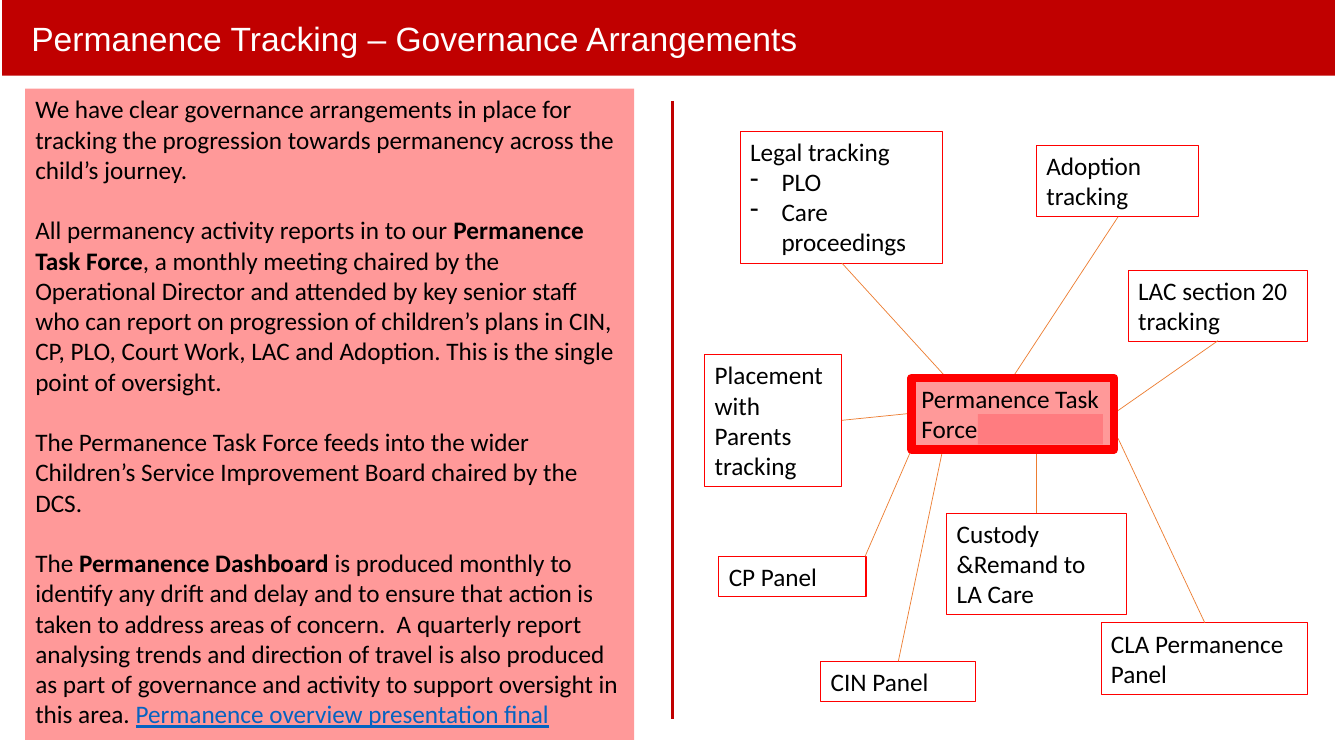
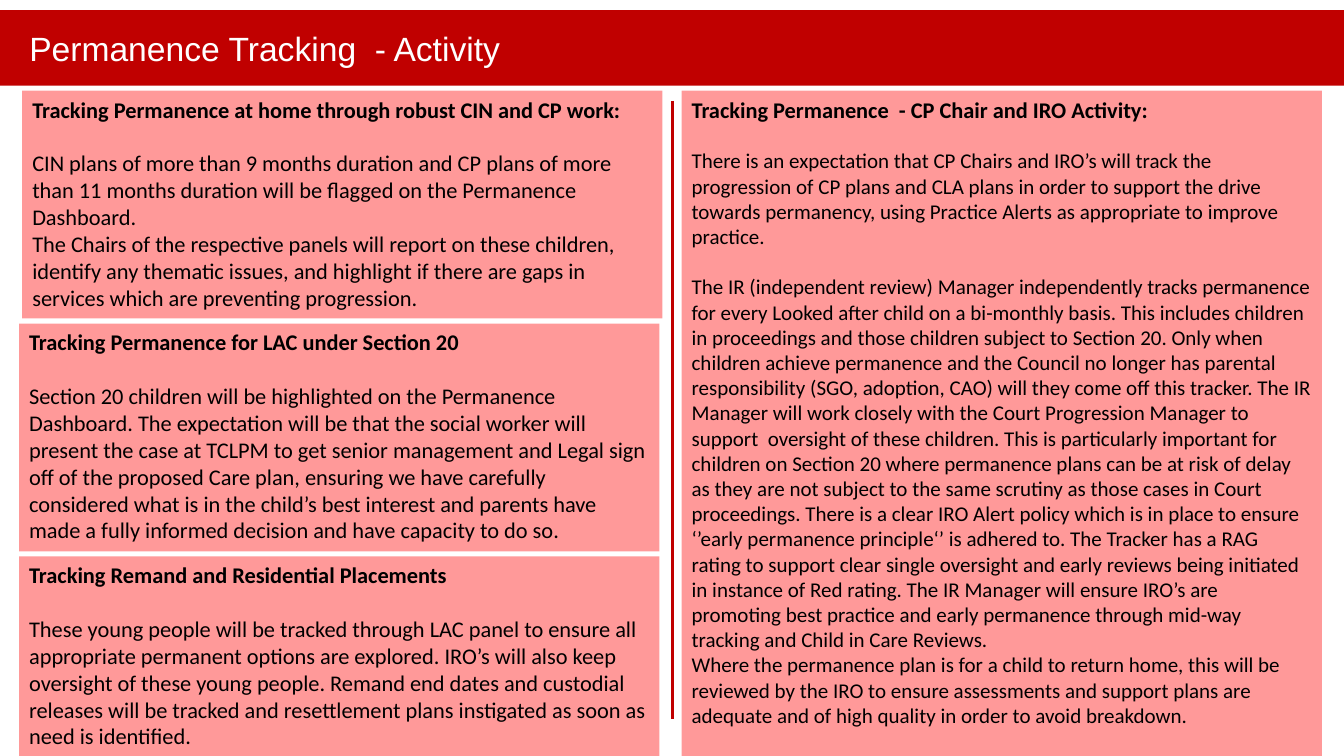
from dataclasses import dataclass

import lxml.etree
import pptx
import pptx.dml.color
import pptx.enum.shapes
import pptx.enum.text
import pptx.oxml.ns
import pptx.util

PX = 9144
RGB = pptx.dml.color.RGBColor.from_string
ANCHOR = pptx.enum.text.MSO_ANCHOR
ALIGN = pptx.enum.text.PP_ALIGN


@dataclass(frozen=True)
class Theme:
    band: str = "C00000"
    panel: str = "FF9999"
    marker: str = "FF7C80"
    border: str = "FF0000"
    spoke: str = "ED7D31"
    link: str = "0563C1"
    ink: str = "000000"
    paper: str = "FFFFFF"
    title_font: str = "Arial"
    body_font: str = "Calibri"
    title_size: int = 24
    body_size: int = 18
    panel_size: int = 16
    small_size: int = 15
    line_height: float = 1.2


THEME = Theme()


@dataclass
class Text:
    spans: list
    size: int = THEME.body_size
    gap: bool = False
    mark: str = ""
    font: str = THEME.body_font
    color: str = THEME.ink


@dataclass
class Node:
    area: tuple
    texts: list
    spoke: tuple = ()


BOLD = {"bold": True}
LINK = {"underline": True, "color": THEME.link}


def px(*lengths):
    return [pptx.util.Emu(length * PX) for length in lengths]


def apply(target, values):
    for name, value in values.items():
        setattr(target, name, value)


def add_tag(parent, tag, **values):
    return lxml.etree.SubElement(parent, pptx.oxml.ns.qn(tag), values)


def set_bullet(para, mark):
    properties = para._p.get_or_add_pPr()
    indent = 285750 if mark else 0
    properties.set("marL", str(indent))
    properties.set("indent", str(-indent))
    if mark:
        add_tag(properties, "a:buChar", char=mark)
    else:
        add_tag(properties, "a:buNone")


def write(box, texts, **frame_format):
    frame = box.text_frame
    apply(frame, {"word_wrap": True, "auto_size": pptx.enum.text.MSO_AUTO_SIZE.NONE,
                  "vertical_anchor": ANCHOR.TOP, **frame_format})
    for index, text in enumerate(texts):
        para = frame.add_paragraph() if index else frame.paragraphs[0]
        set_bullet(para, text.mark)
        before = text.size * THEME.line_height if text.gap else 0
        apply(para, {"alignment": ALIGN.LEFT, "space_before": pptx.util.Pt(before)})
        for words, changes in text.spans:
            span = para.add_run()
            span.text = words
            look = {"name": text.font, "size": pptx.util.Pt(text.size), "bold": False, **changes}
            span.font.color.rgb = RGB(look.pop("color", text.color))
            apply(span.font, look)


def place(box, area):
    apply(box, dict(zip(("left", "top", "width", "height"), px(*area))))


def paint(box, color):
    box.fill.solid()
    box.fill.fore_color.rgb = RGB(color)


def outline(box, color, width):
    box.line.color.rgb = RGB(color)
    box.line.width = pptx.util.Pt(width)


def add_line(page, ends, color, width):
    line = page.shapes.add_connector(pptx.enum.shapes.MSO_CONNECTOR.STRAIGHT, *px(*ends))
    outline(line, color, width)
    add_tag(line._element.spPr, "a:effectLst")


def add_page(deck, layout, title, area):
    page = deck.slides.add_slide(deck.slide_layouts[layout])
    band = page.shapes.title
    place(band, area)
    paint(band, THEME.band)
    write(band, [Text([(title, {})], THEME.title_size, font=THEME.title_font, color=THEME.paper)],
          vertical_anchor=ANCHOR.MIDDLE, margin_left=px(29)[0])
    add_line(page, (667, 100, 667, 713), THEME.band, 2.5)
    return page


def fill_panel(box, area, texts):
    place(box, area)
    paint(box, THEME.panel)
    write(box, texts)


def add_node(page, node, width=0.75):
    box = page.shapes.add_textbox(*px(*node.area))
    outline(box, THEME.border, width)
    write(box, node.texts)
    if node.spoke:
        add_line(page, node.spoke, THEME.spoke, 0.5)
    return box


def label(*parts, **values):
    return Text([(part, {}) for part in parts], **values)


def section(heading, *bodies, size=THEME.panel_size):
    return [Text([(heading, BOLD)], THEME.panel_size)] + [
        label(*parts, size=size, gap=gap) for gap, *parts in bodies]


GOVERNANCE = [
    label("We have clear governance arrangements in place for tracking the progression towards "
          "permanency across the child’s journey."),
    Text([("All permanency activity reports in to our ", {}),
          ("Permanence Task Force", BOLD),
          (", a monthly meeting chaired by the Operational Director and attended by key senior "
           "staff who can report on progression of children’s plans in CIN, CP, PLO, Court Work, "
           "LAC and Adoption. This is the single point of oversight.", {})], gap=True),
    label("The Permanence Task Force feeds into the wider Children’s Service Improvement Board "
          "chaired by the DCS.", gap=True),
    Text([("The ", {}),
          ("Permanence Dashboard ", BOLD),
          ("is produced monthly to identify any drift and delay and to ensure that action is "
           "taken to address areas of concern.  A quarterly report analysing trends and direction "
           "of travel is also produced as part of governance and activity to support oversight in "
           "this area. ", {}),
          ("Permanence overview presentation final", LINK)], gap=True),
]

HUB = Node((904, 375, 201, 71), [label("Permanence Task Force")])

NODES = [
    Node((734, 130, 201, 131),
         [label("Legal tracking"), label("PLO", mark="-"), label("Care proceedings", mark="-")],
         (835, 261, 939, 375)),
    Node((1028, 144, 161, 71), [label("Adoption tracking")], (1109, 215, 1004, 375)),
    Node((1119, 268, 178, 71), [label("LAC section 20 tracking")], (1208, 338, 1105, 410)),
    Node((699, 352, 136, 131), [label("Placement with Parents tracking")], (835, 417, 904, 410)),
    Node((713, 552, 146, 40), [label("CP Panel")], (858, 552, 904, 446)),
    Node((814, 656, 154, 40), [label("CIN Panel")], (891, 656, 935, 446)),
    Node((939, 509, 178, 101), [label("Custody &Remand to LA Care")], (1028, 509, 1028, 446)),
    Node((1092, 618, 205, 71), [label("CLA Permanence Panel")], (1195, 618, 1109, 435)),
]

ACTIVITY = [
    ((22, 90, 635, 226), section(
        "Tracking Permanence at home through robust CIN and CP work:",
        (True, "CIN plans of more than 9 months duration and CP plans of more than 11 months "
         "duration will be flagged on the Permanence Dashboard."),
        (False, "The Chairs of the respective panels will report on these children, identify any "
         "thematic issues, and highlight if there are gaps in services which are preventing "
         "progression."))),
    ((676, 90, 635, 660), section(
        "Tracking Permanence  - CP Chair and IRO Activity:",
        (True, "There is an expectation that CP Chairs and IRO’s will track the progression of CP "
         "plans and CLA plans in order to support the drive towards permanency, using Practice "
         "Alerts as appropriate to improve practice."),
        (True, "The IR (independent review) Manager independently tracks permanence for every "
         "Looked after child on a bi-monthly basis. This includes children in proceedings and "
         "those children subject to Section 20. Only when  children achieve permanence and the "
         "Council no longer has parental responsibility (SGO, adoption, CAO) will they come off "
         "this tracker. The IR Manager will work closely with the Court Progression Manager to "
         "support  oversight of these children. ",
         "This is particularly important for children on Section 20 where permanence plans can be "
         "at risk of delay as they are not subject to the same scrutiny as those cases in Court "
         "proceedings. There is a clear IRO Alert policy which is in place to ensure ‘’early "
         "permanence principle‘’ is adhered to. ",
         "The Tracker has a RAG rating to support clear single oversight and early reviews being "
         "initiated in instance of Red rating. The IR Manager will ensure IRO’s are promoting "
         "best practice and early permanence through mid-way tracking and Child in Care Reviews."),
        (False, "Where the permanence plan is for a child to return home, this will be reviewed "
         "by the IRO to ensure assessments and support plans are adequate and of high quality in "
         "order to avoid breakdown."),
        size=THEME.small_size)),
    ((19, 321, 635, 226), section(
        "Tracking Permanence for LAC under Section 20",
        (True, "Section 20 children will be highlighted on the Permanence Dashboard. The "
         "expectation will be that the social worker will present the case at TCLPM to get senior "
         "management and Legal sign off of the proposed Care plan, ensuring we have carefully "
         "considered what is in the child’s best interest and parents have made a fully informed "
         "decision and have capacity to do so."))),
    ((19, 552, 635, 198), section(
        "Tracking Remand and Residential Placements",
        (True, "These young people will be tracked through LAC panel to ensure all appropriate "
         "permanent options are explored. IRO’s will also keep oversight of these young people. "
         "Remand end dates and custodial releases will be tracked and resettlement plans "
         "instigated as soon as need is identified."))),
]


def build_governance(deck):
    page = add_page(deck, 1, "Permanence Tracking – Governance Arrangements", (2, 0, 1322, 75))
    fill_panel(page.placeholders[1], (25, 88, 604, 646), GOVERNANCE)
    for node in NODES:
        add_node(page, node)
    paint(add_node(page, HUB, width=6), THEME.panel)
    marker = page.shapes.add_shape(pptx.enum.shapes.MSO_SHAPE.RECTANGLE, *px(970, 411, 124, 30))
    marker.shadow.inherit = False
    paint(marker, THEME.marker)
    marker.line.fill.background()


def build_activity(deck):
    page = add_page(deck, 3, "Permanence Tracking  - Activity", (0, 10, 1333, 75))
    holders = [page.placeholders[1], page.placeholders[2]]
    for area, texts in ACTIVITY:
        box = holders.pop(0) if holders else page.shapes.add_textbox(*px(*area))
        fill_panel(box, area, texts)


def main():
    deck = pptx.Presentation()
    apply(deck, dict(zip(("slide_width", "slide_height"), px(1333, 750))))
    build_governance(deck)
    build_activity(deck)
    deck.save("out.pptx")


if __name__ == "__main__":
    main()
